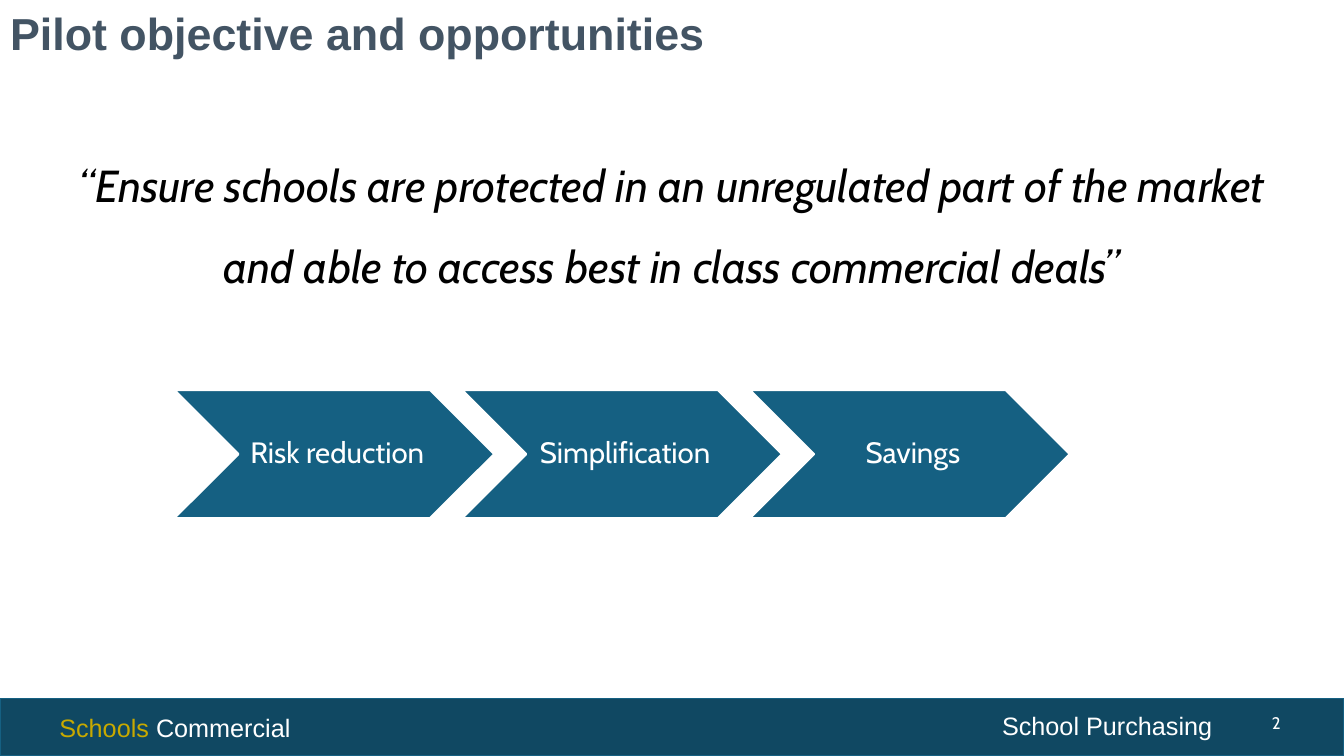
import pptx
import pptx.util
import pptx.dml.color
import pptx.enum.shapes
import pptx.enum.text

Inches = pptx.util.Inches
Pt = pptx.util.Pt
Shapes = pptx.enum.shapes.MSO_SHAPE
Align = pptx.enum.text.PP_ALIGN
Anchor = pptx.enum.text.MSO_ANCHOR

COLORS = {
    "white": "FFFFFF",
    "black": "000000",
    "title": "435464",
    "footer": "104862",
    "teal": "156082",
    "gold": "C8A900",
}
TITLE_ONLY = 5


def color(name):
    return pptx.dml.color.RGBColor.from_string(COLORS[name])


def write_text(box, spans, size, font="Cabin", bold=False, italic=False,
               align=Align.LEFT, anchor=Anchor.TOP, spacing=1.0, wrap=True,
               insets=(0.1, 0.05, 0.1, 0.05)):
    """Fill a shape with one paragraph made of (words, color name) spans."""
    frame = box.text_frame
    frame.word_wrap = wrap
    frame.auto_size = pptx.enum.text.MSO_AUTO_SIZE.NONE
    frame.vertical_anchor = anchor
    (frame.margin_left, frame.margin_top,
     frame.margin_right, frame.margin_bottom) = map(Inches, insets)
    para = frame.paragraphs[0]
    para.alignment = align
    para.line_spacing = spacing
    for words, name in spans:
        span = para.add_run()
        span.text = words
        span.font.size = Pt(size)
        span.font.name = font
        span.font.bold = bold
        span.font.italic = italic
        span.font.color.rgb = color(name)


def add_block(shapes, kind, left, top, width, height, fill, line=None, weight=1):
    block = shapes.add_shape(kind, Inches(left), Inches(top), Inches(width), Inches(height))
    block.shadow.inherit = False
    block.fill.solid()
    block.fill.fore_color.rgb = color(fill)
    if line:
        block.line.color.rgb = color(line)
        block.line.width = Pt(weight)
    else:
        block.line.fill.background()
    return block


def add_label(shapes, left, top, width, height, spans, size, **style):
    box = shapes.add_textbox(Inches(left), Inches(top), Inches(width), Inches(height))
    write_text(box, spans, size, **style)


def add_footer(page, left, top, width, height):
    add_block(page.shapes, Shapes.RECTANGLE, left, top, width, height, "footer", line="teal")
    add_label(page.shapes, left + 0.49, top + 0.09, 2.52, 0.4,
              [("Schools ", "gold"), ("Commercial", "white")], 18, font="Arial", wrap=False)
    add_label(page.shapes, left + 9.84, top + 0.07, 2.31, 0.4,
              [("School Purchasing", "white")], 18, font="Arial", wrap=False)
    add_label(page.shapes, left + 12.26, top + 0.04, 0.54, 0.4, [("2", "white")], 12,
              align=Align.RIGHT, anchor=Anchor.MIDDLE)


def set_title(page, left, top, width, height, words):
    title = page.shapes.title
    title.left, title.top = Inches(left), Inches(top)
    title.width, title.height = Inches(width), Inches(height)
    write_text(title, [(words, "title")], 32, font="Arial", bold=True,
               anchor=Anchor.MIDDLE, spacing=0.9)


def add_quote(page, left, top, width, height, words):
    panel = add_block(page.shapes, Shapes.RECTANGLE, left, top, width, height, "white")
    write_text(panel, [(words, "black")], 32, italic=True, align=Align.CENTER, spacing=1.5)


def add_chevrons(page, left, top, width, height, labels):
    """Spread chevrons over the box, each gap being a tenth of a chevron less its point."""
    overlap = 0.1
    chevron_width = width / (len(labels) - overlap * (len(labels) - 1))
    step = chevron_width * (1 - overlap)
    group = page.shapes.add_group_shape()
    for index, words in enumerate(labels):
        chevron_left = left + index * step
        add_block(group.shapes, Shapes.CHEVRON, chevron_left, top, chevron_width, height,
                  "teal", line="white", weight=1.5)
        add_label(group.shapes, chevron_left + height / 2, top, chevron_width - height, height,
                  [(words, "white")], 21, align=Align.CENTER, anchor=Anchor.MIDDLE,
                  spacing=0.9, insets=(0.09, 0.03, 0.03, 0.03))


def main():
    deck = pptx.Presentation()
    deck.slide_width, deck.slide_height = Inches(13.33), Inches(7.5)
    page = deck.slides.add_slide(deck.slide_layouts[TITLE_ONLY])
    add_footer(page, 0, 6.93, 13.33, 0.57)
    set_title(page, 0, 0.02, 12.4, 0.68, "Pilot objective and opportunities")
    add_quote(page, 0.33, 1.25, 12.67, 2.21,
              "“Ensure schools are protected in an unregulated part of the market "
              "and able to access best in class commercial deals”")
    add_chevrons(page, 1.73, 3.87, 8.88, 1.27,
                 ["Risk reduction", "Simplification", "Savings"])
    deck.save("out.pptx")


if __name__ == "__main__":
    main()
